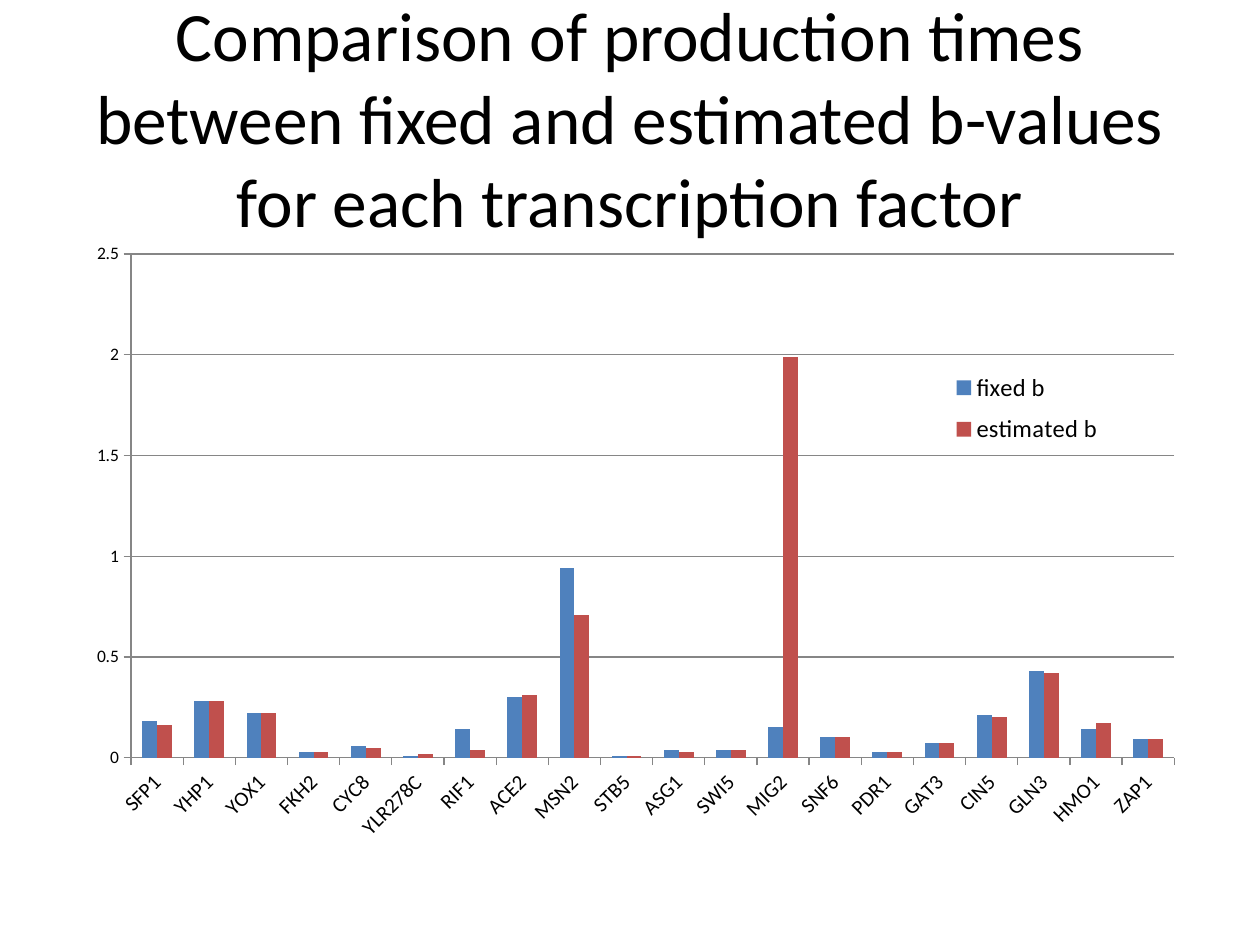
from lxml.etree import SubElement
from pptx import Presentation
from pptx.chart.data import CategoryChartData
from pptx.dml.color import RGBColor
from pptx.enum.chart import XL_CHART_TYPE, XL_LEGEND_POSITION, XL_TICK_MARK
from pptx.enum.text import MSO_ANCHOR, PP_ALIGN
from pptx.oxml.ns import qn
from pptx.util import Inches, Pt

TITLE = ("Comparison of production times between fixed and estimated "
         "b-values for each transcription factor")
PRODUCTION = [  # transcription factor, fixed b, estimated b
    ("SFP1", 0.18, 0.16), ("YHP1", 0.28, 0.28), ("YOX1", 0.22, 0.22),
    ("FKH2", 0.03, 0.03), ("CYC8", 0.06, 0.05), ("YLR278C", 0.01, 0.02),
    ("RIF1", 0.14, 0.04), ("ACE2", 0.3, 0.31), ("MSN2", 0.94, 0.71),
    ("STB5", 0.01, 0.01), ("ASG1", 0.04, 0.03), ("SWI5", 0.04, 0.04),
    ("MIG2", 0.15, 1.99), ("SNF6", 0.1, 0.1), ("PDR1", 0.03, 0.03),
    ("GAT3", 0.07, 0.07), ("CIN5", 0.21, 0.2), ("GLN3", 0.43, 0.42),
    ("HMO1", 0.14, 0.17), ("ZAP1", 0.09, 0.09),
]
SERIES_NAMES = ("fixed b", "estimated b")
THEME = {
    "font": "Calibri", "text": "000000", "line": "868686",
    "series": ("4F81BD", "C0504D"),
    "title": 39.6, "values": 10, "categories": 12, "legend": 14,
}


def style_font(font, size):
    font.name = THEME["font"]
    font.size = Pt(size)
    font.bold = False
    font.color.rgb = RGBColor.from_string(THEME["text"])


def add_text(page, text, left, top, width, height, size, align):
    box = page.shapes.add_textbox(*map(Inches, (left, top, width, height)))
    frame = box.text_frame
    frame.word_wrap = True
    frame.vertical_anchor = MSO_ANCHOR.MIDDLE
    paragraph = frame.paragraphs[0]
    paragraph.alignment = align
    span = paragraph.add_run()
    span.text = text
    style_font(span.font, size)


def place(element, x, y, width, height, inner=False):
    """Set a manual layout, in fractions of the chart, on a plot area or legend."""
    layout = element.find(qn("c:layout"))
    if layout is None:
        layout = SubElement(element, qn("c:layout"))
        if inner:
            element.insert(0, layout)
        else:
            element.find(qn("c:legendPos")).addnext(layout)
    manual = SubElement(layout, qn("c:manualLayout"))
    settings = [("layoutTarget", "inner")] if inner else []
    settings += [("xMode", "edge"), ("yMode", "edge"),
                 ("x", x), ("y", y), ("w", width), ("h", height)]
    for tag, value in settings:
        SubElement(manual, qn(f"c:{tag}")).set("val", str(value))


def style_axis(axis, size):
    axis.major_tick_mark = XL_TICK_MARK.OUTSIDE
    axis.minor_tick_mark = XL_TICK_MARK.NONE
    axis.format.line.color.rgb = RGBColor.from_string(THEME["line"])
    style_font(axis.tick_labels.font, size)


def add_production_chart(page):
    data = CategoryChartData()
    factors, *columns = zip(*PRODUCTION)
    data.categories = factors
    for name, values in zip(SERIES_NAMES, columns):
        data.add_series(name, values)
    chart = page.shapes.add_chart(
        XL_CHART_TYPE.COLUMN_CLUSTERED,
        *map(Inches, (0.5, 1.75, 9, 5.33)), data).chart
    chart.has_title = False
    style_font(chart.font, THEME["values"])

    plot = chart.plots[0]
    plot.gap_width = 150
    plot.overlap = 0
    plot.vary_by_categories = False
    for series, color in zip(plot.series, THEME["series"]):
        series.format.fill.solid()
        series.format.fill.fore_color.rgb = RGBColor.from_string(color)

    category_axis, value_axis = chart.category_axis, chart.value_axis
    style_axis(category_axis, THEME["categories"])
    category_axis.tick_labels.font._element.getroottree()
    labels = category_axis._element.find(qn("c:txPr"))
    labels.find(qn("a:bodyPr")).set("rot", "-2700000")
    style_axis(value_axis, THEME["values"])
    value_axis.minimum_scale, value_axis.maximum_scale = 0, 2.5
    value_axis.major_unit = 0.5
    value_axis.has_major_gridlines = True
    grid = value_axis.major_gridlines.format.line
    grid.color.rgb = RGBColor.from_string(THEME["line"])

    chart.has_legend = True
    legend = chart.legend
    legend.position = XL_LEGEND_POSITION.RIGHT
    legend.include_in_layout = False
    style_font(legend.font, THEME["legend"])
    place(legend._element, 0.77, 0.21, 0.16, 0.14)
    place(plot._element.getparent(), 0.06, 0.05, 0.92, 0.75, inner=True)


def main():
    deck = Presentation()
    deck.slide_width, deck.slide_height = Inches(10), Inches(7.5)
    page = deck.slides.add_slide(deck.slide_layouts[6])
    add_text(page, TITLE, 0.5, 0.3, 9, 1.25,
             size=THEME["title"], align=PP_ALIGN.CENTER)
    add_production_chart(page)
    deck.save("out.pptx")


if __name__ == "__main__":
    main()
